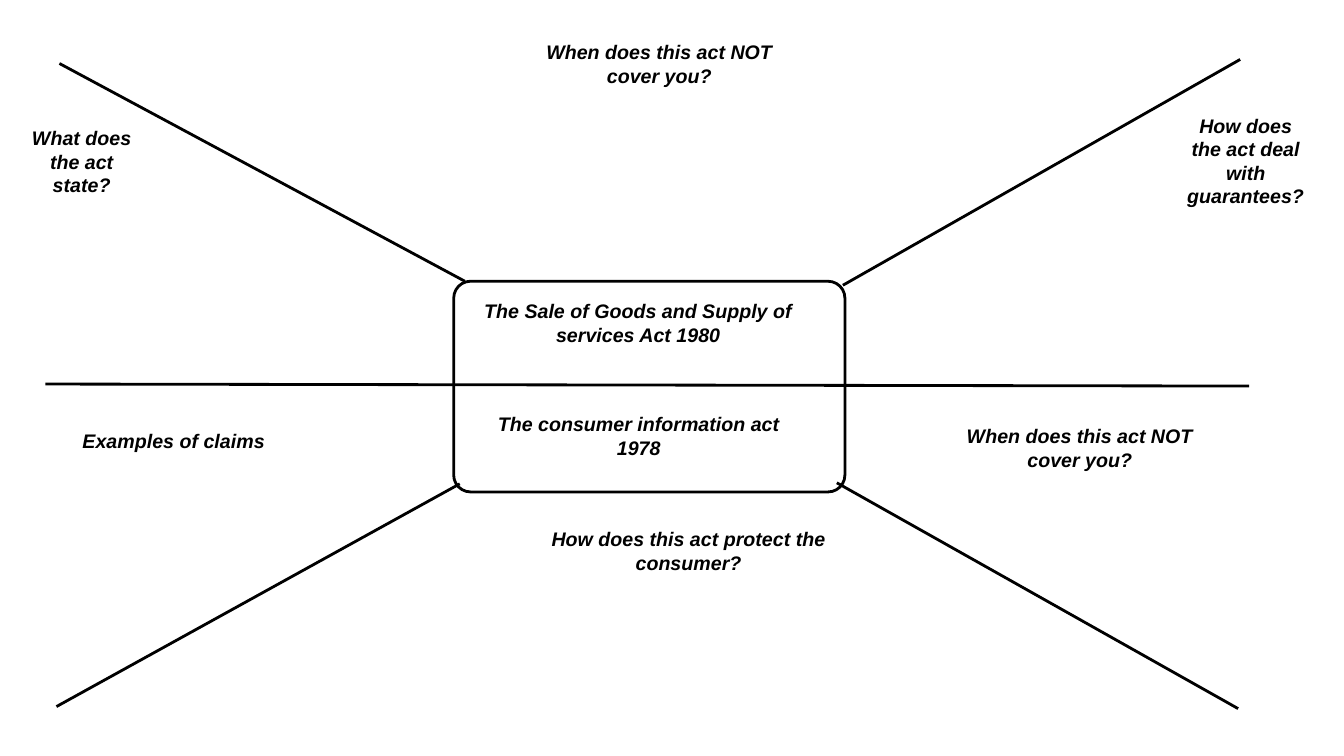
from dataclasses import dataclass

from lxml.etree import SubElement
from pptx import Presentation
from pptx.dml.color import RGBColor
from pptx.enum.shapes import MSO_CONNECTOR as Conn, MSO_SHAPE as Kind
from pptx.enum.text import MSO_ANCHOR as Anchor, MSO_AUTO_SIZE as Fit, PP_ALIGN as Align
from pptx.oxml.ns import qn
from pptx.slide import Slide
from pptx.util import Inches, Pt

HUES = {"ink": "000000", "paper": "FFFFFF"}


@dataclass
class Label:
    text: str
    left: float
    top: float
    width: float = 2.96
    height: float = 1.07
    align: Align = Align.CENTER


@dataclass
class Spoke:
    start: tuple[float, float]
    end: tuple[float, float]


SPOKES = [
    Spoke((4.56, 4.8), (0.56, 7.01)),
    Spoke((4.61, 2.79), (0.59, 0.63)),
    Spoke((8.36, 2.83), (12.3, 0.59)),
    Spoke((8.3, 4.79), (12.28, 7.03)),
    Spoke((0.45, 3.81), (12.39, 3.83)),
]
LABELS = [
    Label("When does this act NOT cover you?", 5.06, 0.35),
    Label("How does the act deal with guarantees?", 11.63, 1.08, 1.45),
    Label("When does this act NOT cover you?", 9.23, 4.16),
    Label("How does this act protect the consumer?", 5.35, 5.18),
    Label("Examples of claims", 0.72, 4.21, align=Align.LEFT),
    Label("What does the act state?", 0.12, 1.2, 1.38),
    Label("The consumer information act 1978", 4.64, 4.04, 3.39, 0.72),
]
TITLE = Label("The Sale of Goods and Supply of services Act 1980", 4.63, 2.92, 3.4, 0.72)


def tint(name: str) -> RGBColor:
    """Return the named colour."""
    return RGBColor.from_string(HUES[name])


def stroke(line) -> None:
    """Give an outline the common ink and width."""
    line.color.rgb = tint("ink")
    line.width = Pt(2)


def add_hub(slide: Slide) -> None:
    """Draw the rounded box in the middle."""
    hub = slide.shapes.add_shape(
        Kind.ROUNDED_RECTANGLE, Inches(4.5), Inches(2.79), Inches(3.88), Inches(2.09))
    hub.adjustments[0] = 0.08
    hub.shadow.inherit = False
    hub.fill.solid()
    hub.fill.fore_color.rgb = tint("paper")
    stroke(hub.line)


def add_spoke(slide: Slide, spoke: Spoke) -> None:
    """Draw one straight dividing line."""
    ends = [Inches(n) for n in (*spoke.start, *spoke.end)]
    line = slide.shapes.add_connector(Conn.STRAIGHT, *ends)
    stroke(line.line)
    SubElement(line._element.spPr, qn("a:effectLst"))


def set_label(shape, label: Label) -> None:
    """Place a text shape and format its words."""
    shape.left, shape.top = Inches(label.left), Inches(label.top)
    shape.width, shape.height = Inches(label.width), Inches(label.height)
    frame = shape.text_frame
    frame.text = label.text
    frame.word_wrap = True
    frame.auto_size = Fit.NONE
    frame.vertical_anchor = Anchor.TOP
    para = frame.paragraphs[0]
    para.alignment = label.align
    font = para.font
    font.name, font.size = "Arial", Pt(14)
    font.bold = font.italic = True
    font.color.rgb = tint("ink")


def main() -> None:
    """Build and save the slide."""
    deck = Presentation()
    deck.slide_width, deck.slide_height = Inches(13.33), Inches(7.5)
    slide = deck.slides.add_slide(deck.slide_layouts.get_by_name("Title Only"))
    add_hub(slide)
    for spoke in SPOKES:
        add_spoke(slide, spoke)
    for label in LABELS:
        set_label(slide.shapes.add_textbox(0, 0, 0, 0), label)
    title = slide.shapes.title
    set_label(title, TITLE)
    slide.shapes._spTree.append(title._element)
    deck.save("out.pptx")


if __name__ == "__main__":
    main()
